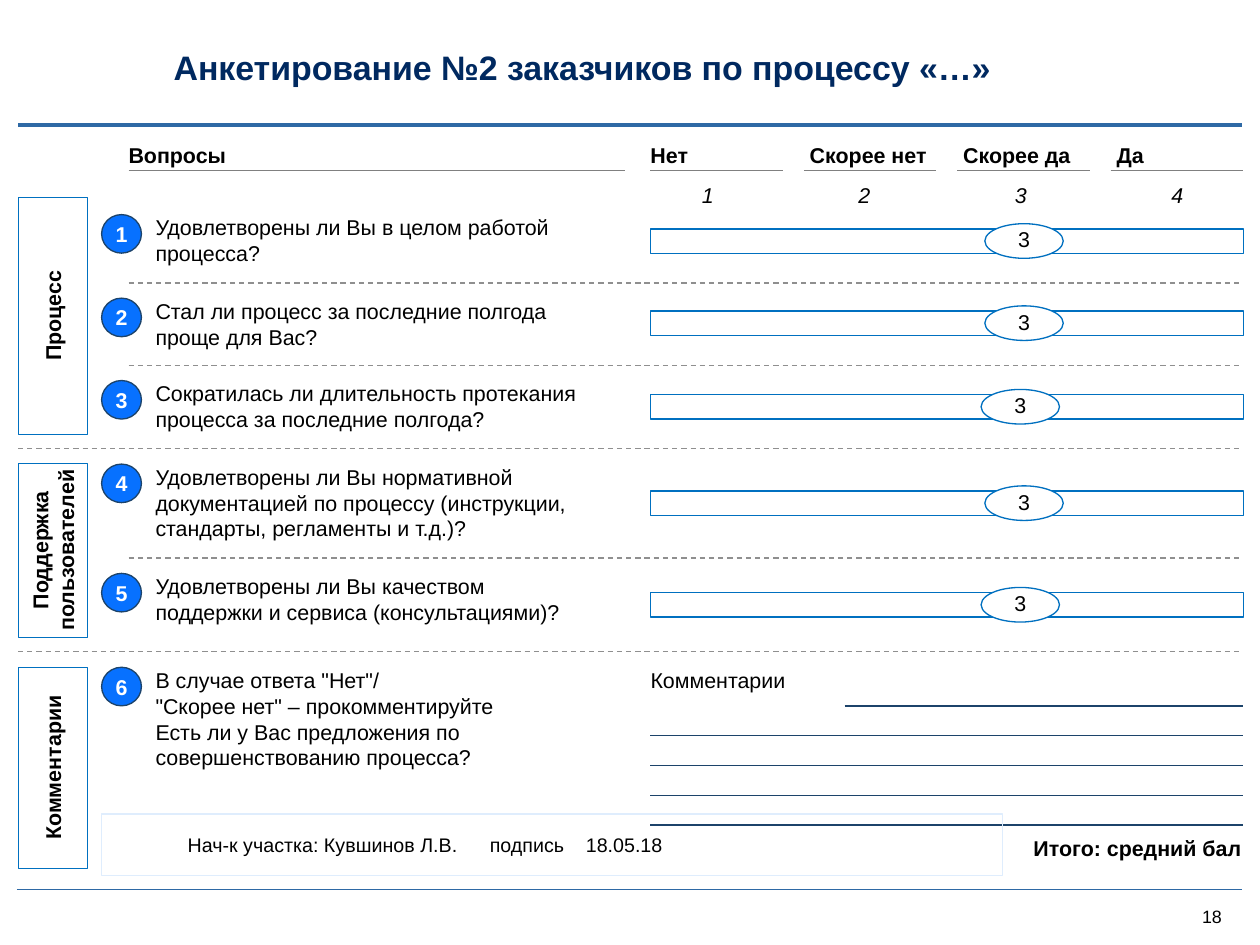
"""Build the customer survey slide."""
from dataclasses import dataclass
from typing import NamedTuple, Optional

from lxml.etree import SubElement
from pptx import Presentation
from pptx.dml.color import RGBColor
from pptx.enum.dml import MSO_LINE as Dash
from pptx.enum.shapes import MSO_CONNECTOR as Conn, MSO_SHAPE as Kind
from pptx.enum.text import MSO_ANCHOR as Anchor, PP_ALIGN as Align
from pptx.oxml.ns import qn
from pptx.util import Pt

BLACK = RGBColor(0x00, 0x00, 0x00)
WHITE = RGBColor(0xFF, 0xFF, 0xFF)
NAVY = RGBColor(0x00, 0x29, 0x60)
RULE = RGBColor(0x2E, 0x69, 0xA5)
GREY = RGBColor(0x8F, 0x8F, 0x8F)
HEAD = RGBColor(0x80, 0x80, 0x80)
EDGE = RGBColor(0x00, 0x70, 0xC0)
DARK = RGBColor(0x1C, 0x43, 0x6A)
BLUE = RGBColor(0x07, 0x71, 0xFF)
PALE = RGBColor(0xDF, 0xED, 0xFD)

LEFT, MID, SCALE, RIGHT = 10.1, 72, 364.3, 696.2


class Box(NamedTuple):
    x: float
    y: float
    w: float
    h: float


class Rule(NamedTuple):
    x: float
    end: float
    y: float
    color: RGBColor
    width: float = 0.75
    dash: bool = False


@dataclass(frozen=True)
class Style:
    size: float = 12
    color: RGBColor = BLACK
    bold: bool = False
    slant: bool = False
    align: Align = Align.LEFT
    anchor: Anchor = Anchor.TOP
    pads: tuple[float, float, float, float] = (0, 0, 0, 0)
    wrap: bool = True
    lead: float = 1.0
    turn: bool = False
    tabs: tuple[float, ...] = ()


@dataclass(frozen=True)
class Item:
    y: float
    h: float
    text: str
    bar: Optional[float] = None
    oval: float = 551.5


class Group(NamedTuple):
    y: float
    h: float
    text: str


TITLE = Style(19, NAVY, bold=True, anchor=Anchor.MIDDLE)
PLAIN = Style()
ASK = Style(pads=(15.1, 0, 0, 0))
TOTAL = Style(bold=True, pads=(7.2, 3.6, 0, 3.6), wrap=False)
PAGE = Style(10, anchor=Anchor.MIDDLE, wrap=False)
MARK = Style(slant=True, wrap=False, lead=0.9)
SCORE = Style(align=Align.CENTER, anchor=Anchor.MIDDLE, wrap=False, lead=0.9)
BADGE = Style(color=WHITE, bold=True, align=Align.CENTER,
              anchor=Anchor.MIDDLE, wrap=False)
SIDE = Style(bold=True, align=Align.CENTER, anchor=Anchor.MIDDLE, turn=True)
SIGN = Style(11, anchor=Anchor.MIDDLE, pads=(48.2, 5.8, 5.8, 5.8),
             tabs=(169.2, 223))

ITEMS = (
    Item(120.2, 28.8, "Удовлетворены ли Вы в целом работой процесса?", 128.2),
    Item(167, 28.8, "Стал ли процесс за последние полгода\vпроще для Вас?", 174.2),
    Item(213.1, 28.8, "Сократилась ли длительность протекания\v"
         "процесса за последние полгода?", 221, 549.4),
    Item(259.9, 43.9, "Удовлетворены ли Вы нормативной документацией по процессу "
         "(инструкции, стандарты, регламенты и т.д.)?", 275),
    Item(321.1, 28.8, "Удовлетворены ли Вы качеством\v"
         "поддержки и сервиса (консультациями)?", 331.9, 549.4),
    Item(373.7, 58.3, 'В случае ответа "Нет"/\v"Скорее нет" – прокомментируйте\n'
         "Есть ли у Вас предложения по совершенствованию процесса?"),
)
GROUPS = (
    Group(110.2, 133.2, "Процесс"),
    Group(259.2, 97.9, "Поддержка пользователей"),
    Group(373.7, 112.3, "Комментарии"),
)
RULES = (
    Rule(9.4, 695.5, 498.2, RULE),
    Rule(LEFT, 695.5, 69.8, RULE, 2.25),
    *(Rule(x, RIGHT, y, GREY, dash=True) for x, y in (
        (MID, 158.4), (MID, 204.5), (LEFT, 251.3), (MID, 312.5), (LEFT, 365))),
    *(Rule(SCALE if i else 473, RIGHT, 395.3 + 16.7 * i, DARK) for i in range(5)),
)
ANSWERS = ("Нет", "Скорее нет", "Скорее да", "Да")


def write(shape, text: str, style: Style) -> None:
    """Fill a shape with text in one style."""
    frame = shape.text_frame
    frame.word_wrap = style.wrap
    frame.vertical_anchor = style.anchor
    (frame.margin_left, frame.margin_top,
     frame.margin_right, frame.margin_bottom) = map(Pt, style.pads)
    if style.turn:
        frame._txBody.bodyPr.set("vert", "vert270")
    for i, part in enumerate(text.split("\n")):
        para = frame.add_paragraph() if i else frame.paragraphs[0]
        para.alignment = style.align
        para.line_spacing = style.lead
        if style.tabs:
            stops = SubElement(para._p.get_or_add_pPr(), qn("a:tabLst"))
            for pos in style.tabs:
                SubElement(stops, qn("a:tab"), pos=str(Pt(pos)), algn="l")
        for j, line in enumerate(part.split("\v")):
            if j:
                para.add_line_break()
            run = para.add_run()
            run.text = line
            font = run.font
            font.name, font.size = "Arial", Pt(style.size)
            font.bold, font.italic = style.bold, style.slant
            font.color.rgb = style.color


def label(slide, box: Box, text: str, style: Style) -> None:
    """Add a text box."""
    write(slide.shapes.add_textbox(*map(Pt, box)), text, style)


def draw(slide, kind: Kind, box: Box, fill: Optional[RGBColor], edge: RGBColor,
         width: float = 0.75, text: str = "", style: Style = PLAIN) -> None:
    """Add an outlined shape with optional text."""
    shape = slide.shapes.add_shape(kind, *map(Pt, box))
    shape.shadow.inherit = False
    if fill is None:
        shape.fill.background()
    else:
        shape.fill.solid()
        shape.fill.fore_color.rgb = fill
    shape.line.color.rgb = edge
    shape.line.width = Pt(width)
    if text:
        write(shape, text, style)


def stroke(slide, rule: Rule) -> None:
    """Add a level line."""
    line = slide.shapes.add_connector(
        Conn.STRAIGHT, Pt(rule.x), Pt(rule.y), Pt(rule.end), Pt(rule.y))
    line.line.color.rgb = rule.color
    line.line.width = Pt(rule.width)
    if rule.dash:
        line.line.dash_style = Dash.DASH
    SubElement(line._element.spPr, qn("a:effectLst"))


def header(slide, x: float, w: float, text: str, pad: float) -> None:
    """Add an underlined column heading."""
    style = Style(bold=True, anchor=Anchor.BOTTOM, pads=(pad, 0, 0, 1.4))
    label(slide, Box(x, 79.6, w, 15.8), text, style)
    stroke(slide, Rule(x, x + w, 95.6, HEAD))


def main() -> None:
    """Draw the slide and save it."""
    deck = Presentation()
    deck.slide_width, deck.slide_height = Pt(705.6), Pt(529.2)
    slide = deck.slides.add_slide(deck.slide_layouts[6])
    label(slide, Box(97.2, 25.9, 526.3, 23), "Анкетирование №2 заказчиков по процессу «…»", TITLE)
    for rule in RULES:
        stroke(slide, rule)
    header(slide, MID, 277.9, "Вопросы", 0)
    for i, text in enumerate(ANSWERS):
        header(slide, SCALE + 85.9 * i, 74.2, text, 3.3 if i else 0)
        label(slide, Box(393.1 + 87.6 * i, 103.7, 6.5, 13), str(i + 1), MARK)
    for group in GROUPS:
        draw(slide, Kind.RECTANGLE, Box(LEFT, group.y, 38.9, group.h),
             WHITE, EDGE, 0.25, group.text, SIDE)
    for num, item in enumerate(ITEMS, 1):
        label(slide, Box(MID, item.y, 277.9, item.h), item.text, ASK)
        draw(slide, Kind.OVAL, Box(56.9, item.y, 22.3, 21.6),
             BLUE, DARK, text=str(num), style=BADGE)
        if item.bar is not None:
            draw(slide, Kind.RECTANGLE, Box(SCALE, item.bar, RIGHT - SCALE, 13.7), WHITE, EDGE)
            draw(slide, Kind.OVAL, Box(item.oval, item.bar - 2.9, 43.9, 19.4),
                 WHITE, EDGE, text="3", style=SCORE)
    label(slide, Box(SCALE, 373.7, 100.1, 14.4), "Комментарии", PLAIN)
    draw(slide, Kind.RECTANGLE, Box(56.9, 455.8, 504.7, 34.6), None, PALE,
         text="Нач-к участка: Кувшинов Л.В.\tподпись\t18.05.18", style=SIGN)
    label(slide, Box(571.7, 464.4, 133.9, 21.6), "Итого: средний бал", TOTAL)
    label(slide, Box(673.2, 506.9, 16.6, 12.2), "18", PAGE)
    deck.save("out.pptx")


if __name__ == "__main__":
    main()
